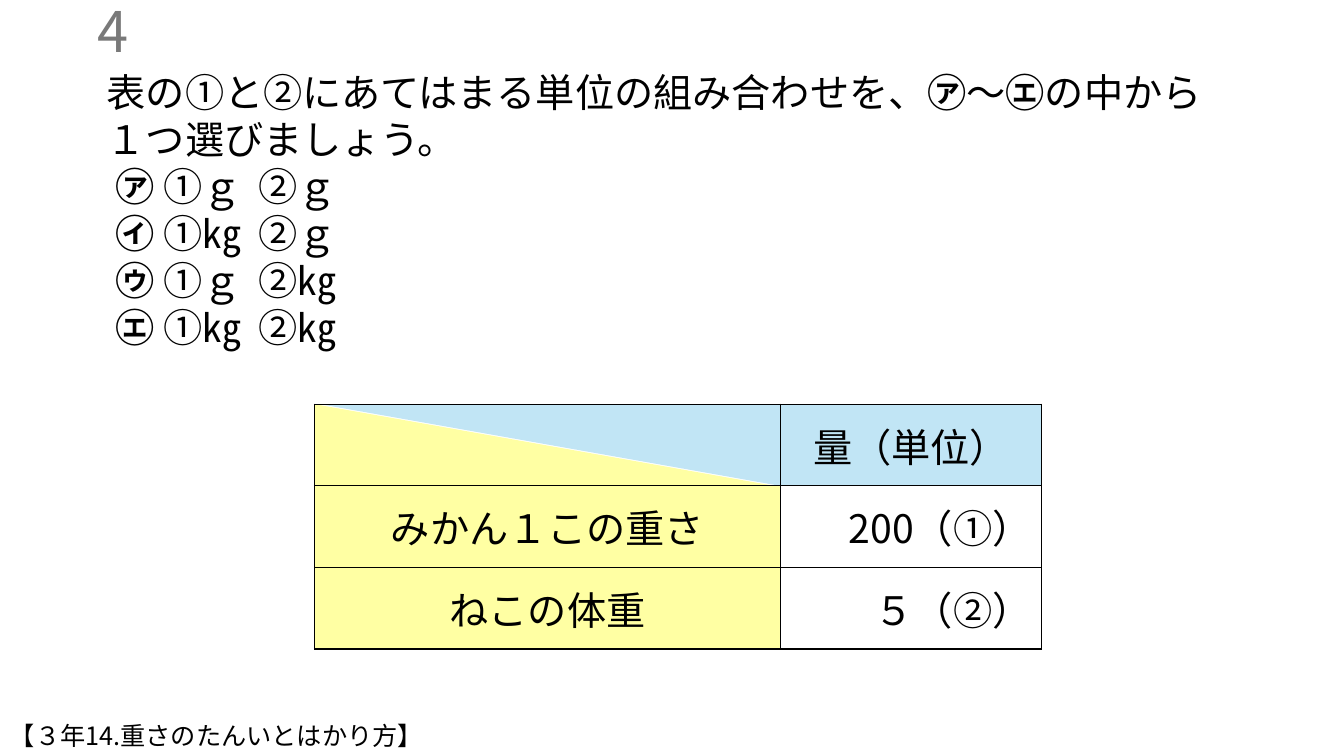
from lxml import etree
from pptx import Presentation
from pptx.dml.color import RGBColor
from pptx.enum import shapes, text
from pptx.oxml.ns import qn
from pptx.util import Inches, Pt

FONT = "Noto Sans CJK JP"
BLACK = RGBColor(0, 0, 0)
GREY = RGBColor(0x79, 0x79, 0x79)
YELLOW = RGBColor(0xFF, 0xFF, 0xA3)
BLUE = RGBColor(0xC1, 0xE5, 0xF5)
LEFT, CENTER, RIGHT = text.PP_ALIGN.LEFT, text.PP_ALIGN.CENTER, text.PP_ALIGN.RIGHT
MIDDLE, TOP = text.MSO_ANCHOR.MIDDLE, text.MSO_ANCHOR.TOP


def style(item, **values):
    for name, value in values.items():
        setattr(item, name, value)


def place(shape, left, top, width, height):
    style(shape, left=Inches(left), top=Inches(top),
          width=Inches(width), height=Inches(height))


def write(para, runs, size=28, color=BLACK, align=LEFT):
    """Fill a paragraph from (words, bold) pairs."""
    para.alignment = align
    for words, bold in runs:
        run = para.add_run()
        run.text = words
        style(run.font, name=FONT, size=Pt(size), bold=bold)
        run.font.color.rgb = color
        east = etree.SubElement(run.font._element, qn("a:ea"))
        east.set("typeface", FONT)


def set_frame(frame, anchor):
    style(frame, word_wrap=True, auto_size=text.MSO_AUTO_SIZE.NONE,
          vertical_anchor=anchor)


def add_number(slide, box):
    title = slide.shapes.title
    place(title, *box)
    set_frame(title.text_frame, MIDDLE)
    write(title.text_frame.paragraphs[0], [("4", False)], 40, GREY, RIGHT)


def add_question(slide, box):
    body = slide.placeholders[1]
    place(body, *box)
    frame = body.text_frame
    set_frame(frame, TOP)
    frame.margin_top = Inches(0.09)
    lines = [[("表の①と②にあてはまる単位の組み合わせを、", False), ("㋐", True),
              ("～", False), ("㋓", True), ("の中から１つ選びましょう。", False)]]
    units = [("ｇ", "ｇ"), ("㎏", "ｇ"), ("ｇ", "㎏"), ("㎏", "㎏")]
    for mark, (one, two) in zip("㋐㋑㋒㋓", units):
        lines.append([(f" {mark} ", True), (f"①{one}\t②{two}", False)])
    for i, runs in enumerate(lines):
        para = frame.add_paragraph() if i else frame.paragraphs[0]
        props = para._p.get_or_add_pPr()
        props.set("marL", "0")
        props.set("indent", "0")
        etree.SubElement(props, qn("a:buNone"))
        style(para, line_spacing=Pt(33.6), space_before=Pt(0))
        write(para, runs)


def add_corner(slide, left, top, width, height):
    """Two triangles that split the head cell along its diagonal."""
    group = slide.shapes.add_group_shape()
    for shift, turn, color in ((0, 0, YELLOW), (0.06, 180, BLUE)):
        half = group.shapes.add_shape(
            shapes.MSO_SHAPE.RIGHT_TRIANGLE, Inches(left + shift), Inches(top),
            Inches(width - 0.06), Inches(height))
        half.rotation = turn
        half.shadow.inherit = False
        half.fill.solid()
        half.fill.fore_color.rgb = color
        half.line.fill.background()


def add_border(cell):
    props = cell._tc.get_or_add_tcPr()
    for i, side in enumerate(("lnL", "lnR", "lnT", "lnB")):
        line = etree.Element(qn(f"a:{side}"), w=str(Pt(1)))
        fill = etree.SubElement(line, qn("a:solidFill"))
        etree.SubElement(fill, qn("a:srgbClr"), val=str(BLACK))
        props.insert(i, line)


def add_weights(slide, left, top, widths, row):
    add_corner(slide, left, top, widths[0], row)
    rows = [[("", None, CENTER), ("量（単位）", BLUE, CENTER)],
            [("みかん１この重さ", YELLOW, CENTER), ("200（①）", None, RIGHT)],
            [("ねこの体重", YELLOW, CENTER), ("５（②）", None, RIGHT)]]
    table = slide.shapes.add_table(
        len(rows), len(widths), Inches(left), Inches(top),
        Inches(sum(widths)), Inches(row * len(rows))).table
    style(table, first_row=False, horz_banding=False)
    for col, width in zip(table.columns, widths):
        col.width = Inches(width)
    for r, cells in enumerate(rows):
        table.rows[r].height = Inches(row)
        for c, (words, color, align) in enumerate(cells):
            cell = table.cell(r, c)
            cell.vertical_anchor = MIDDLE
            if color is None:
                cell.fill.background()
            else:
                cell.fill.solid()
                cell.fill.fore_color.rgb = color
            add_border(cell)
            if words:
                write(cell.text_frame.paragraphs[0], [(words, False)], align=align)


def add_unit(slide, box):
    note = slide.shapes.add_textbox(*map(Inches, box))
    set_frame(note.text_frame, TOP)
    write(note.text_frame.paragraphs[0],
          [("【３年14.重さのたんいとはかり方】", False)], 18)


def main():
    deck = Presentation()
    style(deck, slide_width=Inches(13.33), slide_height=Inches(7.5))
    slide = deck.slides.add_slide(deck.slide_layouts[1])
    add_number(slide, (-1.63, 0.1, 3, 0.4))
    add_question(slide, (0.96, 0.59, 11.19, 2.93))
    add_weights(slide, 3.12, 4.01, (4.62, 2.59), 0.81)
    add_unit(slide, (0, 7.1, 7.49, 0.4))
    deck.save("out.pptx")


if __name__ == "__main__":
    main()
